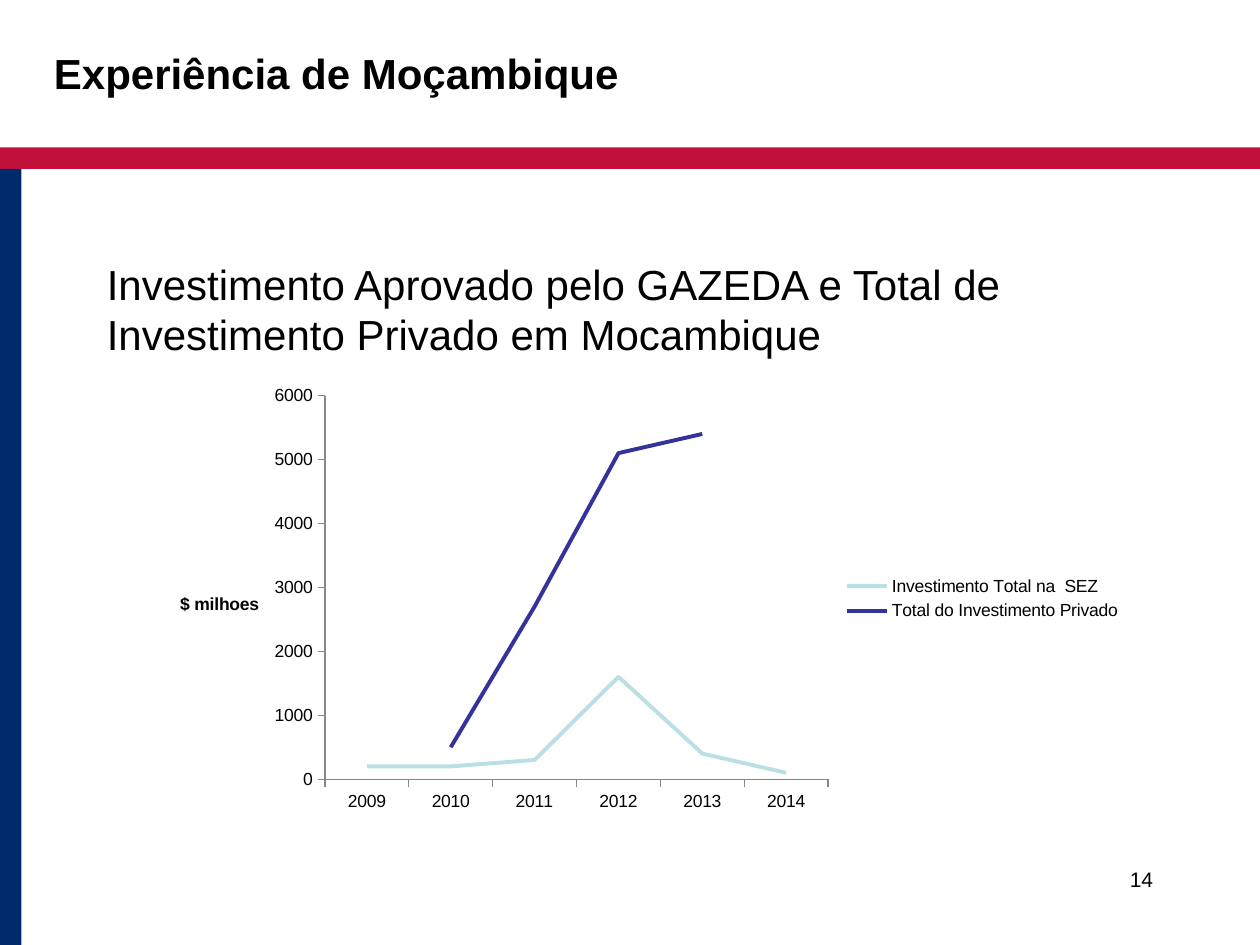
from lxml import etree
from pptx import Presentation
from pptx.chart.data import CategoryChartData
from pptx.dml.color import RGBColor
from pptx.enum import chart as ch, shapes, text
from pptx.oxml import ns
from pptx.util import Inches, Pt

COLORS = {"red": "C2113A", "navy": "002A6C", "black": "000000", "axis": "868686",
          "zone": "BBE0E3", "private": "333399"}
FONT = "Arial"
YEARS = ["2009", "2010", "2011", "2012", "2013", "2014"]
INVESTMENTS = [
    ("Investimento Total na  SEZ", [200, 200, 300, 1600, 400, 100], "zone"),
    ("Total do Investimento Privado", [None, 500, 2700, 5100, 5400, None], "private"),
]


def rgb(name):
    """Return the named palette colour."""
    return RGBColor.from_string(COLORS[name])


def style_font(font, size, bold=False):
    """Apply the slide's typeface in black."""
    font.name, font.size, font.bold = FONT, Pt(size), bold
    font.color.rgb = rgb("black")


def add_band(slide, box, color):
    """Draw a plain coloured band."""
    band = slide.shapes.add_shape(shapes.MSO_SHAPE.RECTANGLE, *map(Inches, box))
    band.shadow.inherit = False
    band.fill.solid()
    band.fill.fore_color.rgb = rgb(color)
    band.line.fill.background()


def add_text(slide, box, wording, size, bold=False, align=text.PP_ALIGN.LEFT):
    """Place one wrapped paragraph at the top of its box."""
    frame = slide.shapes.add_textbox(*map(Inches, box)).text_frame
    frame.word_wrap = True
    frame.vertical_anchor = text.MSO_ANCHOR.TOP
    paragraph = frame.paragraphs[0]
    paragraph.alignment = align
    run = paragraph.add_run()
    run.text = wording
    style_font(run.font, size, bold)


def set_layout(element, successor_tags, **settings):
    """Give a chart part a manual layout before its successors."""
    for old in element.findall(ns.qn("c:layout")):
        element.remove(old)
    layout = etree.Element(ns.qn("c:layout"))
    manual = etree.SubElement(layout, ns.qn("c:manualLayout"))
    for tag, value in settings.items():
        etree.SubElement(manual, ns.qn(f"c:{tag}")).set("val", str(value))
    successors = [child for child in element if child.tag in map(ns.qn, successor_tags)]
    if successors:
        successors[0].addprevious(layout)
    else:
        element.append(layout)


def style_axis(axis):
    """Show outward ticks and a grey line without gridlines."""
    axis.has_major_gridlines = False
    axis.major_tick_mark = ch.XL_TICK_MARK.OUTSIDE
    axis.minor_tick_mark = ch.XL_TICK_MARK.NONE
    axis.format.line.color.rgb = rgb("axis")
    axis.format.line.width = Pt(0.75)
    style_font(axis.tick_labels.font, 10)


def add_investment_chart(slide, box):
    """Draw the yearly investment lines with legend and axis title."""
    data = CategoryChartData()
    data.categories = YEARS
    for name, values, _ in INVESTMENTS:
        data.add_series(name, values)
    chart = slide.shapes.add_chart(ch.XL_CHART_TYPE.LINE, *map(Inches, box), data).chart
    chart.has_title = False
    style_font(chart.font, 10)
    plot = chart.plots[0]
    plot.vary_by_categories = False
    for series, (_, _, color) in zip(plot.series, INVESTMENTS):
        series.smooth = False
        series.marker.style = ch.XL_MARKER_STYLE.NONE
        series.format.line.color.rgb = rgb(color)
        series.format.line.width = Pt(2.25)

    style_axis(chart.category_axis)
    amounts = chart.value_axis
    style_axis(amounts)
    amounts.minimum_scale, amounts.maximum_scale, amounts.major_unit = 0, 6000, 1000
    amounts.tick_labels.number_format = "General"
    amounts.tick_labels.number_format_is_linked = False
    frame = amounts.axis_title.text_frame
    run = frame.paragraphs[0].add_run()
    run.text = "$ milhoes"
    style_font(run.font, 10, True)
    body = frame.paragraphs[0]._p.getparent().find(ns.qn("a:bodyPr"))
    body.set("rot", "0")
    body.set("vert", "horz")
    set_layout(amounts.axis_title._element, ["c:overlay", "c:spPr", "c:txPr"],
               xMode="edge", yMode="edge", x=0.03, y=0.48)

    chart.has_legend = True
    chart.legend.position = ch.XL_LEGEND_POSITION.RIGHT
    chart.legend.include_in_layout = False
    style_font(chart.legend.font, 10)
    plot_area = chart._chartSpace.chart.plotArea
    set_layout(plot_area, ["c:lineChart"], layoutTarget="inner", xMode="edge",
               yMode="edge", x=0.18, y=0.04, w=0.51, h=0.87)


def add_frame(slide, width, height):
    """Draw the header rule and the side band."""
    thickness, top = 0.17, 1.17
    add_band(slide, (0, top, width, thickness), "red")
    side_top = top + thickness
    add_band(slide, (0, side_top, thickness, height - side_top), "navy")


def main():
    """Build and save the slide."""
    deck = Presentation()
    width, height = 10, 7.5
    deck.slide_width, deck.slide_height = Inches(width), Inches(height)
    slide = deck.slides.add_slide(deck.slide_layouts[6])
    add_frame(slide, width, height)
    add_text(slide, (0.33, 0.33, 8.5, 0.67), "Experiência de Moçambique", 24, bold=True)
    add_text(slide, (0.75, 2, 8.5, 4.25),
             "Investimento Aprovado pelo GAZEDA e Total de "
             "Investimento Privado em Mocambique", 24)
    add_investment_chart(slide, (1.17, 3, 7.83, 3.5))
    add_text(slide, (7.17, 6.83, 2.08, 0.5), "14", 12, align=text.PP_ALIGN.RIGHT)
    deck.save("out.pptx")


if __name__ == "__main__":
    main()
